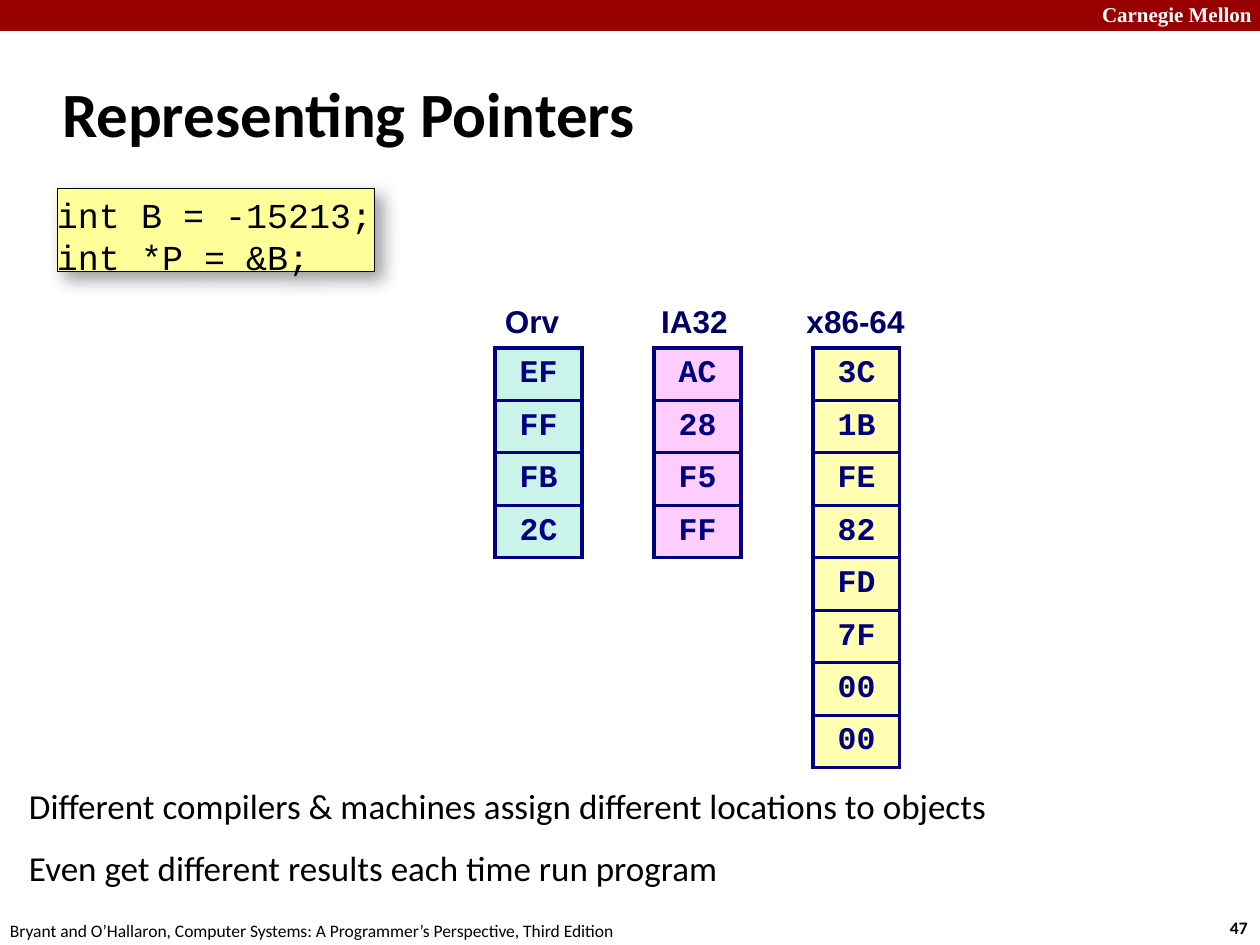
"""Build the slide on how machines represent pointers."""
from dataclasses import dataclass

from lxml.etree import SubElement
from pptx import Presentation
from pptx.dml.color import RGBColor
from pptx.enum.shapes import MSO_SHAPE
from pptx.enum.text import MSO_ANCHOR, MSO_AUTO_SIZE, PP_ALIGN
from pptx.oxml import parse_xml
from pptx.oxml.ns import nsdecls, qn
from pptx.util import Emu, Pt

SCALE = 914400 / 126
LABEL_MARGINS = (8, 8, 13, 8)


@dataclass(frozen=True)
class Theme:
    """Colours, fonts and type sizes of the slide."""
    ink: str = "000000"
    paper: str = "FFFFFF"
    banner: str = "990000"
    code_fill: str = "FFFF99"
    shadow: str = "808080"
    label: str = "000066"
    grid: str = "000080"
    mint: str = "CAF4E9"
    pink: str = "FFCCFE"
    cream: str = "FFFEB2"
    sans: str = "Calibri"
    serif: str = "Times New Roman"
    heading: str = "Arial"
    mono: str = "Courier New"
    title_size: int = 36
    body_size: int = 20
    table_size: int = 18
    banner_size: int = 12
    footer_size: int = 10


def px(length):
    """Turn a length in px into EMU."""
    return Emu(round(length * SCALE))


def write(frame, text, *, font, size, color, bold=False, align=PP_ALIGN.LEFT,
          anchor=MSO_ANCHOR.TOP, margins=(13, 6, 13, 6), wrap=True, gap=0,
          line_height=None, plain=False):
    """Fill a text frame with one formatted paragraph per line of text."""
    frame.auto_size = MSO_AUTO_SIZE.NONE
    frame.word_wrap = wrap
    frame.vertical_anchor = anchor
    frame.margin_left, frame.margin_top, frame.margin_right, frame.margin_bottom = map(px, margins)
    for index, line in enumerate(text.split("\n")):
        paragraph = frame.add_paragraph() if index else frame.paragraphs[0]
        if plain:
            properties = paragraph._p.get_or_add_pPr()
            properties.set("marL", "0")
            properties.set("indent", "0")
            SubElement(properties, qn("a:buNone"))
        paragraph.alignment = align
        paragraph.space_before = Pt(gap if index else 0)
        if line_height:
            paragraph.line_spacing = Pt(line_height)
        run = paragraph.add_run()
        run.text = line
        run.font.name, run.font.size, run.font.bold = font, Pt(size), bold
        run.font.color.rgb = RGBColor.from_string(color)


class SlideBuilder:
    """Adds styled elements to the current slide."""

    def __init__(self, slide, theme):
        """Keep the slide and its theme."""
        self.slide = slide
        self.theme = theme

    def placeholder(self, index, box, text, **style):
        """Move a template placeholder and fill it."""
        shape = self.slide.placeholders[index]
        shape.left, shape.top, shape.width, shape.height = map(px, box)
        write(shape.text_frame, text, font=self.theme.sans, color=self.theme.ink, **style)

    def text(self, box, text, **style):
        """Add a text box."""
        shape = self.slide.shapes.add_textbox(*map(px, box))
        write(shape.text_frame, text, **style)

    def rectangle(self, box, fill):
        """Add a rectangle without a line."""
        shape = self.slide.shapes.add_shape(MSO_SHAPE.RECTANGLE, *map(px, box))
        shape.fill.solid()
        shape.fill.fore_color.rgb = RGBColor.from_string(fill)
        shape.line.fill.background()
        shape.shadow.inherit = False
        return shape

    def code(self, box, text):
        """Add a code panel with a soft shadow."""
        theme = self.theme
        shape = self.rectangle(box, theme.code_fill)
        shape.line.color.rgb = RGBColor.from_string(theme.ink)
        shape.line.width = Pt(0.5)
        shape._element.spPr.find(qn("a:effectLst")).append(parse_xml(
            f'<a:outerShdw {nsdecls("a")} blurRad="{Pt(10)}" dist="{Pt(6)}" dir="2700000" '
            f'algn="tl" rotWithShape="0"><a:srgbClr val="{theme.shadow}">'
            '<a:alpha val="75000"/></a:srgbClr></a:outerShdw>'))
        write(shape.text_frame, text, font=theme.mono, size=theme.body_size, color=theme.ink,
              margins=(0, 5, 0, 0), wrap=False, line_height=24)

    def byte_column(self, left, top, values, fill):
        """Add a one-column table of bytes."""
        theme = self.theme
        count = len(values)
        box = (left, top, 87, count * 105 // 2)
        table = self.slide.shapes.add_table(count, 1, *map(px, box)).table
        table.first_row = table.horz_banding = False
        for row, value in enumerate(values):
            cell = table.cell(row, 0)
            write(cell.text_frame, value, font=theme.mono, size=theme.table_size,
                  color=theme.grid, bold=True, align=PP_ALIGN.CENTER)
            cell.vertical_anchor = MSO_ANCHOR.MIDDLE
            cell.margin_left = cell.margin_right = cell.margin_top = cell.margin_bottom = px(8)
            cell.fill.solid()
            cell.fill.fore_color.rgb = RGBColor.from_string(fill)
            properties = cell._tc.get_or_add_tcPr()
            for position, side in enumerate(("lnL", "lnR", "lnT", "lnB")):
                properties.insert(position, parse_xml(
                    f'<a:{side} {nsdecls("a")} w="{Pt(2)}"><a:solidFill>'
                    f'<a:srgbClr val="{theme.grid}"/></a:solidFill></a:{side}>'))


def main():
    """Build and save the presentation."""
    theme = Theme()
    presentation = Presentation()
    presentation.slide_width, presentation.slide_height = px(1260), px(945)
    slide = presentation.slides.add_slide(presentation.slide_layouts[1])
    slide.background.fill.solid()
    slide.background.fill.fore_color.rgb = RGBColor.from_string(theme.paper)
    builder = SlideBuilder(slide, theme)

    builder.rectangle((0, 0, 1260, 31), theme.banner)
    builder.text((1089, -4, 180, 38), "Carnegie Mellon", font=theme.serif,
                 size=theme.banner_size, color=theme.paper, bold=True)
    footer = dict(font=theme.sans, size=theme.footer_size, color=theme.ink, wrap=False)
    builder.text((1217, 911, 46, 34), "47", bold=True, **footer)
    builder.text((-3, 914, 640, 34), "Bryant and O’Hallaron, Computer Systems: "
                 "A Programmer’s Perspective, Third Edition", **footer)

    builder.placeholder(0, (49, 60, 1046, 105), "Representing Pointers",
                        size=theme.title_size, bold=True, anchor=MSO_ANCHOR.MIDDLE)
    builder.placeholder(1, (21, 777, 1218, 93),
                        "Different compilers & machines assign different locations to objects\n"
                        "Even get different results each time run program",
                        size=theme.body_size, margins=LABEL_MARGINS, gap=11, plain=True)
    builder.code((57, 188, 318, 84), "int B = -15213;\nint *P = &B;")

    machines = [
        ("Orv", 494, 81, "EF FF FB 2C", theme.mint),
        ("IA32", 653, 88, "AC 28 F5 FF", theme.pink),
        ("x86-64", 798, 120, "3C 1B FE 82 FD 7F 00 00", theme.cream),
    ]
    for index, (name, left, width, values, fill) in enumerate(machines):
        builder.text((left, 294, width, 53), name, font=theme.heading, size=theme.table_size,
                     color=theme.label, bold=True, align=PP_ALIGN.CENTER,
                     margins=LABEL_MARGINS, wrap=False)
        builder.byte_column(495 + 159 * index, 348, values.split(), fill)

    presentation.save("out.pptx")


if __name__ == "__main__":
    main()
